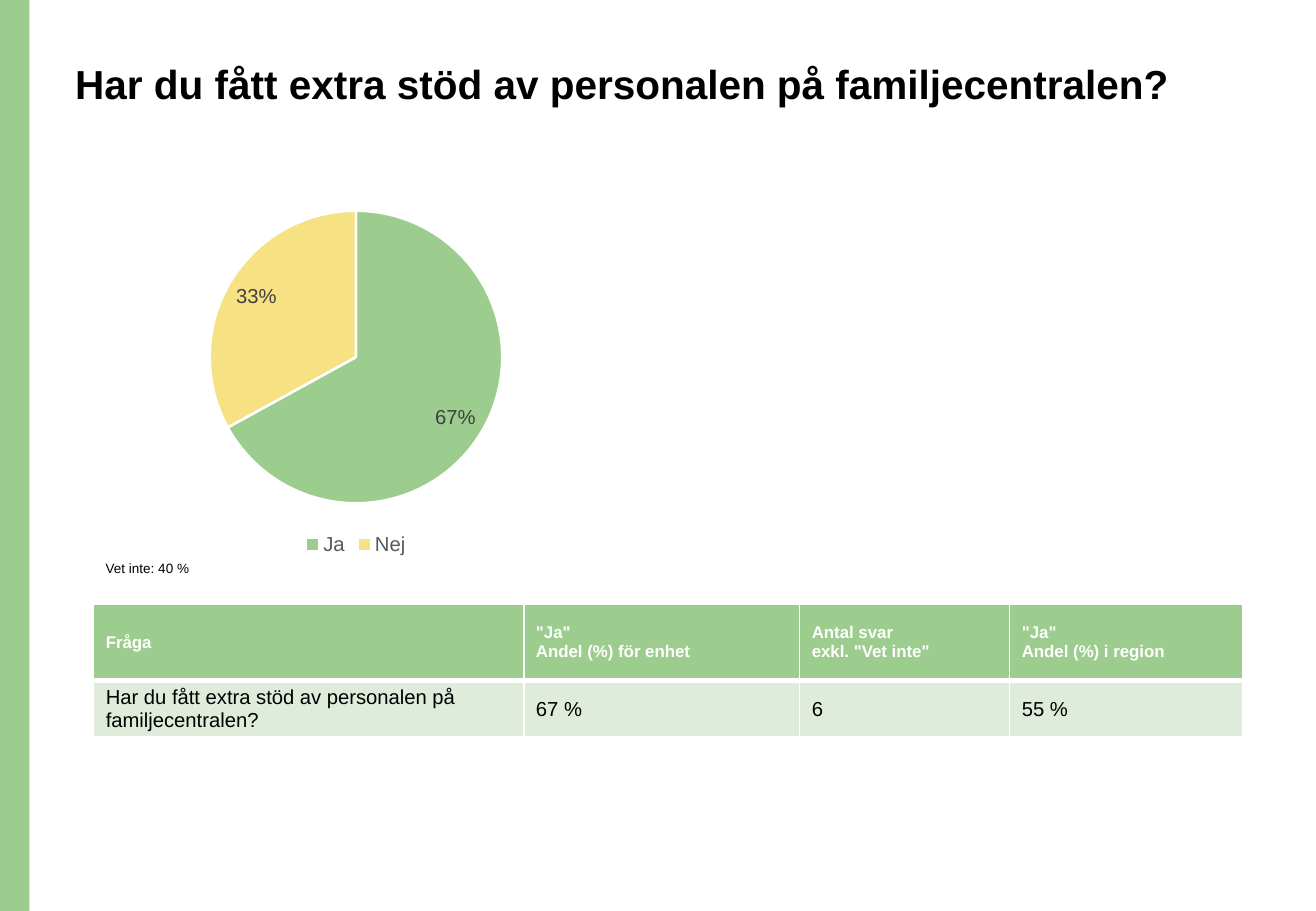
from lxml import etree
from pptx import Presentation
from pptx.chart.data import CategoryChartData
from pptx.dml.color import RGBColor
from pptx.enum.chart import XL_CHART_TYPE, XL_LABEL_POSITION, XL_LEGEND_POSITION
from pptx.enum.shapes import MSO_SHAPE
from pptx.enum.text import MSO_ANCHOR
from pptx.oxml import parse_xml
from pptx.oxml.ns import nsdecls
from pptx.util import Pt

PIE = XL_CHART_TYPE.PIE
INSIDE_END = XL_LABEL_POSITION.INSIDE_END
LEGEND_BOTTOM = XL_LEGEND_POSITION.BOTTOM
RECTANGLE = MSO_SHAPE.RECTANGLE
MIDDLE = MSO_ANCHOR.MIDDLE

FONT = "Arial"
COLORS = {
    "green": "9DCC8F",
    "yellow": "F6E183",
    "pale": "DFECDB",
    "white": "FFFFFF",
    "black": "000000",
    "label": "404040",
    "legend": "595959",
}
QUESTION = "Har du fått extra stöd av personalen på familjecentralen?"


def rgb(name):
    return RGBColor.from_string(COLORS[name])


def write(frame, text, size, color="black", bold=False, spacing=None):
    """Fill a text frame, one paragraph per line of text."""
    frame.word_wrap = True
    for index, line in enumerate(text.split("\n")):
        paragraph = frame.paragraphs[0] if index == 0 else frame.add_paragraph()
        paragraph.line_spacing = spacing
        run = paragraph.add_run()
        run.text = line
        run.font.name = FONT
        run.font.size = Pt(size)
        run.font.bold = bold
        run.font.color.rgb = rgb(color)


prs = Presentation()
prs.slide_width, prs.slide_height = Pt(780), Pt(540)
slide = prs.slides.add_slide(prs.slide_layouts[6])
shapes = slide.shapes

side_band = shapes.add_shape(RECTANGLE, 0, 0, Pt(17.5), prs.slide_height)
side_band.shadow.inherit = False
side_band.fill.solid()
side_band.fill.fore_color.rgb = rgb("green")
side_band.line.fill.background()

title = shapes.add_textbox(Pt(37.5), Pt(34.5), Pt(672.5), Pt(73.5))
write(title.text_frame, QUESTION, 24, bold=True, spacing=0.9)

# Share of answers
answers = CategoryChartData(number_format="0%")
answers.categories = ["Ja", "Nej"]
answers.add_series("Series 1", (0.67, 0.33))
pie = shapes.add_chart(PIE, Pt(88), Pt(115), Pt(246), Pt(217), answers).chart
pie.has_title = False
pie.font.name, pie.font.size = FONT, Pt(10)
pie.font.color.rgb = rgb("black")
pie.has_legend = True
pie.legend.position = LEGEND_BOTTOM
pie.legend.include_in_layout = False
pie.legend.font.name, pie.legend.font.size = FONT, Pt(12)
pie.legend.font.color.rgb = rgb("legend")

plot = pie.plots[0]
plot.vary_by_categories = True
plot.has_data_labels = True
labels = plot.data_labels
labels.show_value = True
labels.show_percentage = False
labels.number_format, labels.number_format_is_linked = "0%", False
labels.position = INSIDE_END
labels.font.name, labels.font.size = FONT, Pt(12)
labels.font.color.rgb = rgb("label")
for index, color in enumerate(("green", "yellow")):
    slice_format = plot.series[0].points[index].format
    slice_format.fill.solid()
    slice_format.fill.fore_color.rgb = rgb(color)
    slice_format.line.color.rgb = rgb("white")
    slice_format.line.width = Pt(1.5)

# Comparison with the region
rows = [
    ["Fråga", '"Ja"\nAndel (%) för enhet', 'Antal svar\nexkl. "Vet inte"',
     '"Ja"\nAndel (%) i region'],
    [QUESTION, "67 %", "6", "55 %"],
]
row_styles = [
    {"fill": "green", "borders": {"L": 1, "R": 1, "T": 1, "B": 3},
     "text": {"size": 10, "color": "white", "bold": True}},
    {"fill": "pale", "borders": {"L": 1, "R": 1, "T": 3, "B": 1},
     "text": {"size": 12}},
]
column_widths = [255, 163.5, 124.5, 138]
row_heights = [45.5, 33.5]
table = shapes.add_table(len(rows), len(column_widths), Pt(55.5), Pt(358),
                         Pt(sum(column_widths)), Pt(sum(row_heights))).table
for column, width in zip(table.columns, column_widths):
    column.width = Pt(width)
for row, height, texts, style in zip(table.rows, row_heights, rows, row_styles):
    row.height = Pt(height)
    for cell, text in zip(row.cells, texts):
        cell.vertical_anchor = MIDDLE
        cell.margin_top = cell.margin_bottom = Pt(2)
        write(cell.text_frame, text, **style["text"])
        properties = cell._tc.get_or_add_tcPr()
        for side, width in style["borders"].items():
            border = parse_xml(f'<a:ln{side} {nsdecls("a")} w="{Pt(width)}"/>')
            fill = etree.SubElement(border, border.tag.replace(f"ln{side}", "solidFill"))
            etree.SubElement(fill, fill.tag.replace("solidFill", "srgbClr"),
                             val=COLORS["white"])
            properties.append(border)
        cell.fill.solid()
        cell.fill.fore_color.rgb = rgb(style["fill"])

unsure = shapes.add_textbox(Pt(55.5), Pt(323.5), Pt(151), Pt(34.5))
write(unsure.text_frame, "Vet inte: 40 %", 8, spacing=1.5)

prs.save("out.pptx")
